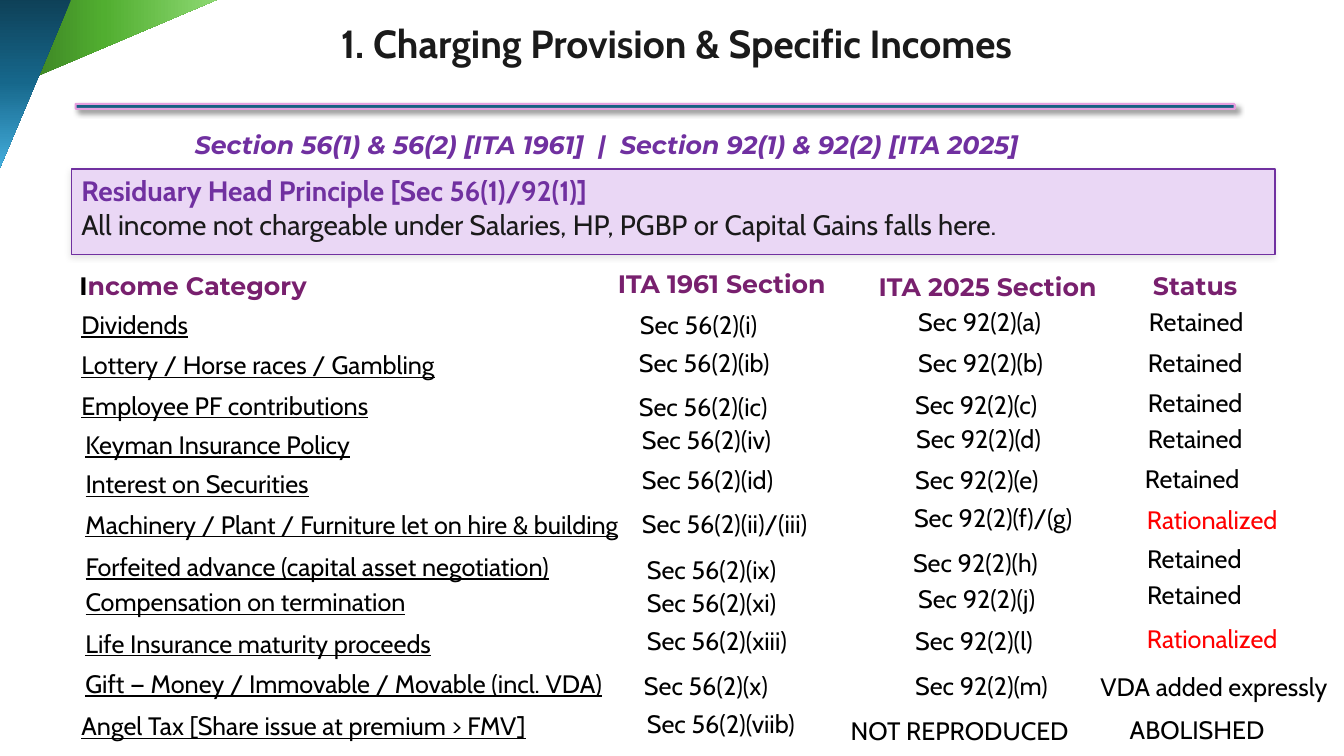
from dataclasses import dataclass
from typing import NamedTuple

import lxml.etree
import pptx
import pptx.dml.color
import pptx.enum.shapes
import pptx.enum.text
import pptx.oxml.ns
import pptx.util

Pt = pptx.util.Pt
RGB = pptx.dml.color.RGBColor.from_string
SHAPE = pptx.enum.shapes.MSO_SHAPE
ALIGN = pptx.enum.text.PP_ALIGN
qn = pptx.oxml.ns.qn


@dataclass(frozen=True)
class Theme:
    body: str = "Cabin"
    display: str = "Montserrat"
    title_size: int = 28
    panel_size: int = 20
    text_size: int = 18
    ink: str = "1A1A1A"
    black: str = "000000"
    purple: str = "7030A0"
    plum: str = "78206E"
    red: str = "FF0000"
    panel: str = "EAD7F5"
    rule: str = "156082"
    rule_edge: str = "E59EDD"
    greens: tuple[str, ...] = ("34701F", "51AE30", "8ED973")
    blues: tuple[str, ...] = ("0E4057", "16678B", "46B1E1")


T = Theme()


class Box(NamedTuple):
    left: float
    top: float
    width: float
    height: float = 29


class Run(NamedTuple):
    text: str
    color: str
    font: dict


class Cell(NamedTuple):
    text: str
    left: float
    top: float
    width: float


class Shadow(NamedTuple):
    alpha: int
    blur: float
    distance: float
    angle: int


def style(name: str, size: int, **flags: bool) -> dict:
    return {"name": name, "size": Pt(size), **flags}


TITLE = style(T.body, T.title_size, bold=True)
SECTION = style(T.display, T.text_size, bold=True, italic=True)
HEADING = style(T.display, T.text_size, bold=True)
PRINCIPLE = style(T.body, T.panel_size, bold=True)
PRINCIPLE_TEXT = style(T.body, T.panel_size, bold=False)
CATEGORY = style(T.body, T.text_size, underline=True)
ENTRY = style(T.body, T.text_size)

HEADINGS = (
    (Box(49.7, 189.4, 296.6), (Run("I", T.black, HEADING), Run("ncome Category", T.plum, HEADING))),
    (Box(434.2, 187.9, 168.5), (Run("ITA 1961 Section", T.plum, HEADING),)),
    (Box(620.6, 190.1, 184.3), (Run("ITA 2025 Section", T.plum, HEADING),)),
    (Box(816.5, 189.4, 86.4), (Run("Status", T.plum, HEADING),)),
)

# One row per income: category, 1961 section, 2025 section, status
INCOMES = (
    (Cell("Dividends", 51.1, 217.4, 92.2), Cell("Sec 56(2)(i)", 450, 217.4, 124.6),
     Cell("Sec 92(2)(a)", 648.7, 215.3, 110.2), Cell("Retained", 813.6, 215.3, 92.2)),
    (Cell("Lottery / Horse races / Gambling", 51.1, 246.2, 267.1), Cell("Sec 56(2)(ib)", 449.3, 244.8, 124.6),
     Cell("Sec 92(2)(b)", 648.7, 244.8, 124.6), Cell("Retained", 812.9, 244.8, 92.2)),
    (Cell("Employee PF contributions", 51.1, 275, 253.4), Cell("Sec 56(2)(ic)", 449.3, 275.8, 124.6),
     Cell("Sec 92(2)(c)", 646.6, 274.3, 124.6), Cell("Retained", 812.9, 272.9, 92.2)),
    (Cell("Keyman Insurance Policy", 54, 303.1, 252), Cell("Sec 56(2)(iv)", 451.4, 299.5, 124.6),
     Cell("Sec 92(2)(d)", 647.3, 298.8, 124.6), Cell("Retained", 812.9, 298.8, 92.2)),
    (Cell("Interest on Securities", 54, 331.2, 186.5), Cell("Sec 56(2)(id)", 451.4, 328.3, 124.6),
     Cell("Sec 92(2)(e)", 646.6, 328.3, 124.6), Cell("Retained", 810.7, 327.6, 92.2)),
    (Cell("Machinery / Plant / Furniture let on hire & building", 54, 360, 401),
     Cell("Sec 56(2)(ii)/(iii)", 451.4, 359.3, 147.6),
     Cell("Sec 92(2)(f)/(g)", 645.8, 355, 133.2), Cell("Rationalized", 812.2, 356.4, 124.6)),
    (Cell("Forfeited advance (capital asset negotiation)", 54, 390.2, 361.4),
     Cell("Sec 56(2)(ix)", 455, 392.4, 144),
     Cell("Sec 92(2)(h)", 645.1, 387.4, 124.6), Cell("Retained", 812.2, 384.5, 92.2)),
    (Cell("Compensation on termination", 54, 415.4, 253.4), Cell("Sec 56(2)(xi)", 455, 416.2, 144),
     Cell("Sec 92(2)(j)", 648.7, 413.3, 124.6), Cell("Retained", 812.2, 410.4, 92.2)),
    (Cell("Life Insurance maturity proceeds", 54, 445, 278.6), Cell("Sec 56(2)(xiii)", 455, 442.8, 144),
     Cell("Sec 92(2)(l)", 646.6, 442.8, 124.6), Cell("Rationalized", 812.2, 441.4, 124.6)),
    (Cell("Gift — Money / Immovable / Movable (incl. VDA)", 54, 473.8, 383.8),
     Cell("Sec 56(2)(x)", 452.9, 475.2, 144),
     Cell("Sec 92(2)(m)", 646.6, 475.2, 124.6), Cell("VDA added expressly", 779, 475.9, 181)),
    (Cell("Angel Tax [Share issue at premium > FMV]", 51.1, 504, 334.1),
     Cell("Sec 56(2)(viib)", 455, 502.6, 144),
     Cell("NOT REPRODUCED", 600.5, 507.6, 184.3), Cell("ABOLISHED", 799.9, 506.9, 160)),
)


def write_runs(tf, runs: tuple[Run, ...], align=ALIGN.LEFT) -> None:
    """Fill the first paragraph; a run of "\\n" becomes a line break."""
    tf.word_wrap = True
    p = tf.paragraphs[0]
    p.alignment = align
    for run in runs:
        if run.text == "\n":
            p.add_line_break()
            continue
        r = p.add_run()
        r.text = run.text
        r.font.color.rgb = RGB(run.color)
        for name, value in run.font.items():
            setattr(r.font, name, value)


def add_text(slide, box: Box, runs: tuple[Run, ...], align=ALIGN.LEFT, inset: float = 7.2) -> None:
    tf = slide.shapes.add_textbox(*map(Pt, box)).text_frame
    tf.margin_left = Pt(inset)
    write_runs(tf, runs, align)
    tf.auto_size = pptx.enum.text.MSO_AUTO_SIZE.SHAPE_TO_FIT_TEXT


def add_shadow(sp, shadow: Shadow) -> None:
    effects = sp._element.spPr.find(qn("a:effectLst"))
    outer = lxml.etree.SubElement(
        effects, qn("a:outerShdw"), blurRad=str(Pt(shadow.blur)), dist=str(Pt(shadow.distance)),
        dir=str(shadow.angle * 60000), algn="ctr", rotWithShape="0")
    color = lxml.etree.SubElement(outer, qn("a:srgbClr"), val=T.black)
    lxml.etree.SubElement(color, qn("a:alpha"), val=str(shadow.alpha * 1000))


def add_bar(slide, kind, box: Box, fill: str, line: str, weight: float, shadow: Shadow):
    sp = slide.shapes.add_shape(kind, *map(Pt, box))
    sp.shadow.inherit = False
    sp.fill.solid()
    sp.fill.fore_color.rgb = RGB(fill)
    sp.line.color.rgb = RGB(line)
    sp.line.width = Pt(weight)
    add_shadow(sp, shadow)
    return sp


def add_corner(slide, box: Box, colors: tuple[str, ...], rotation: float = 0, flip: bool = False) -> None:
    """Draw a corner triangle with a three-stop gradient."""
    sp = slide.shapes.add_shape(SHAPE.RIGHT_TRIANGLE, *map(Pt, box))
    sp.shadow.inherit = False
    sp.line.fill.background()
    sp.rotation = rotation
    if flip:
        sp._element.spPr.find(qn("a:xfrm")).set("flipV", "1")
    sp.fill.gradient()
    grad = sp._element.spPr.find(qn("a:gradFill"))
    for child in list(grad):
        grad.remove(child)
    stops = lxml.etree.SubElement(grad, qn("a:gsLst"))
    for position, color in zip((0, 48, 100), colors):
        stop = lxml.etree.SubElement(stops, qn("a:gs"), pos=str(position * 1000))
        lxml.etree.SubElement(stop, qn("a:srgbClr"), val=color)
    lxml.etree.SubElement(grad, qn("a:lin"), ang=str(270 * 60000), scaled="1")


def main() -> None:
    prs = pptx.Presentation()
    prs.slide_width, prs.slide_height = Pt(960), Pt(540)
    slide = prs.slides.add_slide(prs.slide_layouts[6])

    add_bar(slide, SHAPE.SNIP_2_DIAG_RECTANGLE, Box(54, 74.2, 828, 3.6),
            T.rule, T.rule_edge, 1.5, Shadow(40, 4, 3, 45))
    add_corner(slide, Box(43.9, -46.1, 67, 157.7), T.greens, rotation=90)
    add_corner(slide, Box(-1.4, -1.4, 52.6, 124.6), T.blues, flip=True)

    add_text(slide, Box(115.2, 10.1, 735.8, 41),
             (Run("1. Charging Provision & Specific Incomes", T.ink, TITLE),), ALIGN.CENTER)
    add_text(slide, Box(90.7, 88.6, 781.9, 51.1),
             (Run("Section 56(1) & 56(2) [ITA 1961]  |  Section 92(1) & 92(2) [ITA 2025]", T.purple, SECTION),),
             inset=48.5)

    panel = add_bar(slide, SHAPE.RECTANGLE, Box(51.1, 120.6, 859.7, 61.2),
                    T.panel, T.purple, 1, Shadow(10, 4, 2, 135))
    panel.text_frame.vertical_anchor = pptx.enum.text.MSO_ANCHOR.TOP
    write_runs(panel.text_frame, (
        Run("Residuary Head Principle [Sec 56(1)/92(1)]", T.purple, PRINCIPLE),
        Run("\n", T.ink, PRINCIPLE),
        Run("All income not chargeable under Salaries, HP, PGBP or Capital Gains falls here.",
            T.ink, PRINCIPLE_TEXT)))

    for box, runs in HEADINGS:
        add_text(slide, box, runs)
    for row in INCOMES:
        for column, cell in enumerate(row):
            color = T.red if cell.text == "Rationalized" else T.black
            font = ENTRY if column else CATEGORY
            add_text(slide, Box(cell.left, cell.top, cell.width), (Run(cell.text, color, font),))

    prs.save("out.pptx")


if __name__ == "__main__":
    main()
